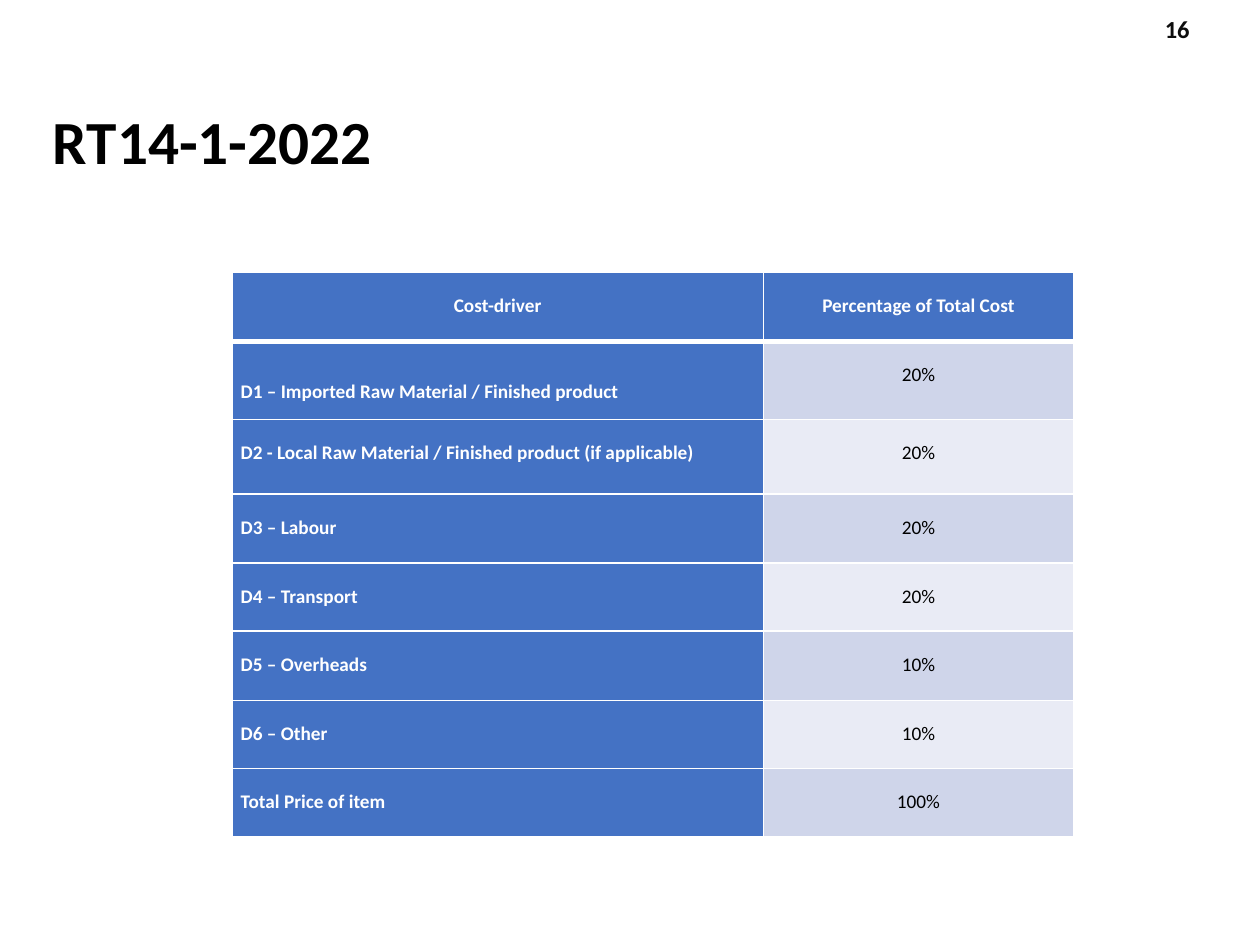
"""Build the RT14-1-2022 cost-driver slide."""
from lxml import etree
from pptx import Presentation
from pptx.dml.color import RGBColor
from pptx.enum.text import MSO_ANCHOR, PP_ALIGN
from pptx.oxml.ns import qn
from pptx.util import Inches, Pt

CENTER, JUSTIFY, LEFT, RIGHT = PP_ALIGN.CENTER, PP_ALIGN.JUSTIFY, PP_ALIGN.LEFT, PP_ALIGN.RIGHT
TOP, MIDDLE = MSO_ANCHOR.TOP, MSO_ANCHOR.MIDDLE
COLORS = {
    "black": "000000",
    "number": "0D0D0D",
    "white": "FFFFFF",
    "blue": "4472C4",
    "dark_band": "CFD5EA",
    "light_band": "E9EBF5",
}
COST_ROWS = [
    ("Cost-driver", "Percentage of Total Cost"),
    ("D1 – Imported Raw Material / Finished product", "20%"),
    ("D2 - Local Raw Material / Finished product (if applicable)", "20%"),
    ("D3 – Labour", "20%"),
    ("D4 – Transport", "20%"),
    ("D5 – Overheads", "10%"),
    ("D6 – Other", "10%"),
    ("Total Price of item", "100%"),
]
COLUMN_WIDTHS = [4.22, 2.46]
ROW_HEIGHTS = [0.55, 0.62, 0.59, 0.55, 0.54, 0.55, 0.54, 0.54]


def style_text(paragraph, size, color, bold, align):
    paragraph.alignment = align
    font = paragraph.font
    font.name = "Calibri"
    font.size = Pt(size)
    font.bold = bold
    font.color.rgb = RGBColor.from_string(COLORS[color])


def add_border(cell, side, width):
    line = etree.SubElement(cell._tc.get_or_add_tcPr(), qn(f"a:ln{side}"), w=str(Pt(width)))
    fill = etree.SubElement(line, qn("a:solidFill"))
    etree.SubElement(fill, qn("a:srgbClr"), val=COLORS["white"])


presentation = Presentation()
presentation.slide_width = Inches(10)
presentation.slide_height = Inches(7.5)
slide = presentation.slides.add_slide(presentation.slide_layouts[5])

title = slide.shapes.title
title.left, title.top = Inches(0.32), Inches(0.68)
title.width, title.height = Inches(9.34), Inches(1.03)
title.text_frame.text = "RT14-1-2022"
title.text_frame.vertical_anchor = MIDDLE
title.text_frame.paragraphs[0].line_spacing = Pt(30)
style_text(title.text_frame.paragraphs[0], 35, "black", True, LEFT)

page_number = slide.shapes.add_textbox(Inches(9.1), Inches(0), Inches(0.44), Inches(0.45))
page_number.text_frame.word_wrap = True
page_number.text_frame.vertical_anchor = MIDDLE
page_number.text_frame.text = "16"
style_text(page_number.text_frame.paragraphs[0], 14, "number", True, RIGHT)

cost_table = slide.shapes.add_table(
    len(COST_ROWS), len(COLUMN_WIDTHS), Inches(1.84), Inches(2.16),
    Inches(sum(COLUMN_WIDTHS)), Inches(sum(ROW_HEIGHTS)),
).table
cost_table.first_col = True
for column, width in zip(cost_table.columns, COLUMN_WIDTHS):
    column.width = Inches(width)

for row_index, (labels, height) in enumerate(zip(COST_ROWS, ROW_HEIGHTS)):
    cost_table.rows[row_index].height = Inches(height)
    band = "dark_band" if row_index % 2 else "light_band"
    for column_index, label in enumerate(labels):
        is_heading = row_index == 0 or column_index == 0
        is_driver = row_index > 0 and column_index == 0
        cell = cost_table.cell(row_index, column_index)
        cell.text = label
        cell.margin_left = cell.margin_right = Inches(0.07)
        cell.margin_top, cell.margin_bottom = Inches(0.08), Inches(0)
        cell.vertical_anchor = MIDDLE if is_driver and row_index == 1 else TOP
        for side in "LRTB":
            under_header = (row_index, side) in [(0, "B"), (1, "T")]
            add_border(cell, side, 3 if under_header else 1)
        cell.fill.solid()
        cell.fill.fore_color.rgb = RGBColor.from_string(COLORS["blue" if is_heading else band])

        paragraph = cell.text_frame.paragraphs[0]
        properties = paragraph._p.get_or_add_pPr()
        indent = Inches(0.59)
        properties.set("marL", str(indent))
        properties.set("indent", str(-indent))
        tabs = etree.SubElement(properties, qn("a:tabLst"))
        etree.SubElement(tabs, qn("a:tab"), pos=str(indent), algn="l")
        paragraph.line_spacing = 1.5
        paragraph.space_after = Pt(6)
        style_text(paragraph, 11, "white" if is_heading else "black", is_heading,
                   JUSTIFY if is_driver else CENTER)

presentation.save("out.pptx")
